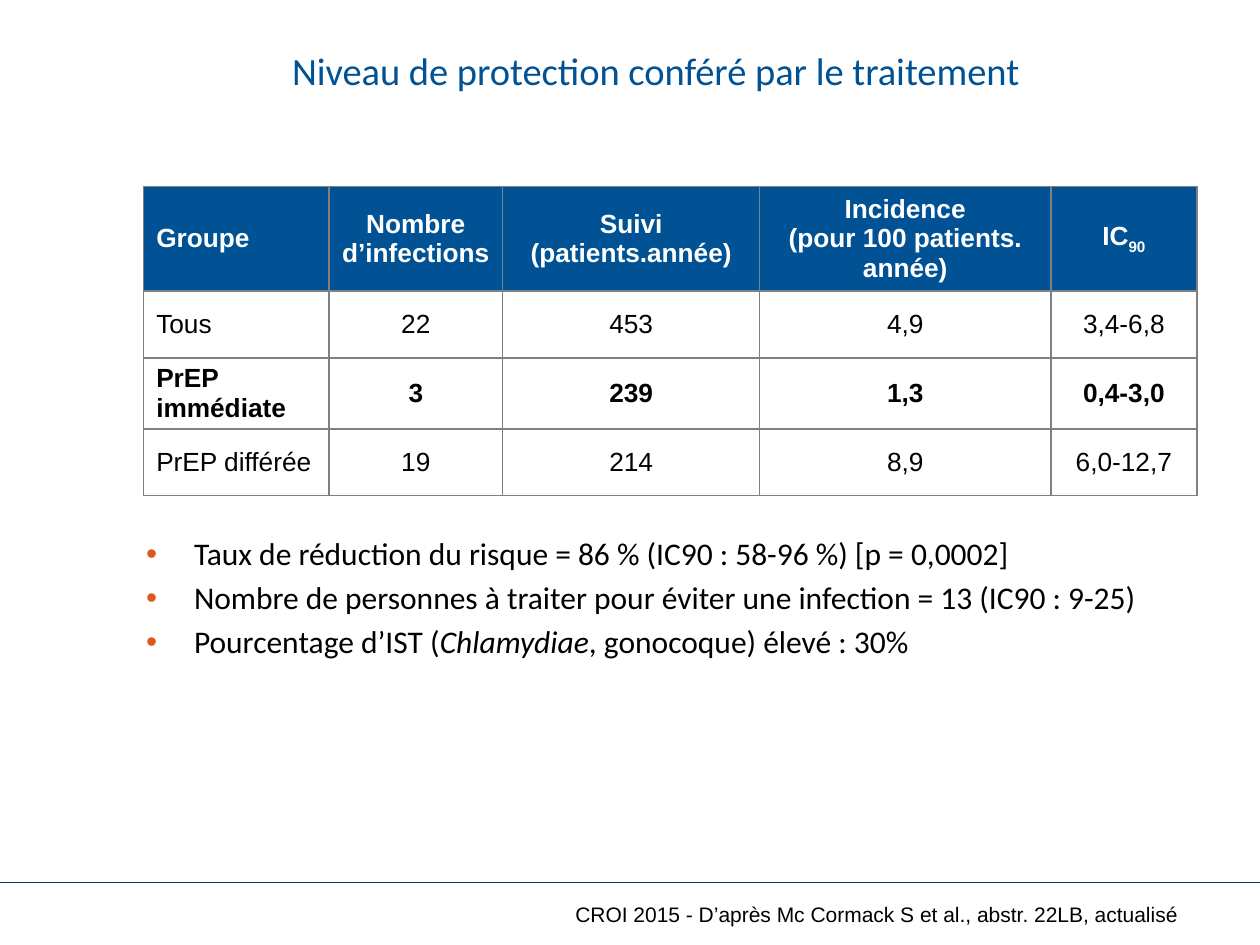
from lxml import etree
from pptx import Presentation
from pptx.dml.color import RGBColor
from pptx.enum.shapes import MSO_CONNECTOR
from pptx.enum.text import MSO_ANCHOR, MSO_AUTO_SIZE, PP_ALIGN
from pptx.oxml.ns import qn
from pptx.util import Inches, Pt

LEFT, CENTER, RIGHT = PP_ALIGN.LEFT, PP_ALIGN.CENTER, PP_ALIGN.RIGHT
MIDDLE, TOP = MSO_ANCHOR.MIDDLE, MSO_ANCHOR.TOP
STRAIGHT = MSO_CONNECTOR.STRAIGHT
NO_AUTOFIT = MSO_AUTO_SIZE.NONE

BLUE = RGBColor(0x00, 0x52, 0x94)
NAVY = RGBColor(0x17, 0x37, 0x5E)
ORANGE = RGBColor(0xDC, 0x5A, 0x20)
GREY = RGBColor(0x80, 0x80, 0x80)
WHITE = RGBColor(0xFF, 0xFF, 0xFF)
BLACK = RGBColor(0x00, 0x00, 0x00)

# Content
TITLE = "Niveau de protection conféré par le traitement"
ROWS = [
    ("Groupe", "Nombre d’infections", "Suivi\v(patients.année)",
     "Incidence\v(pour 100 patients. année)", "IC"),
    ("Tous", "22", "453", "4,9", "3,4-6,8"),
    ("PrEP immédiate", "3", "239", "1,3", "0,4-3,0"),
    ("PrEP différée", "19", "214", "8,9", "6,0-12,7"),
]
IC_SUBSCRIPT = "90"
BOLD_ROWS = (0, 2)
COL_WIDTHS = (1.47, 1.38, 2.04, 2.31, 1.16)
ROW_HEIGHTS = (0.83, 0.53, 0.53, 0.53)
BULLETS = [  # each a list of (text, italic)
    [("Taux de réduction du risque = 86 % (IC90 : 58-96 %) [p = 0,0002]", False)],
    [("Nombre de personnes à traiter pour éviter une infection\u00a0= 13 (IC90 : 9-25)", False)],
    [("Pourcentage d’IST (", False), ("Chlamydiae", True),
     (", gonocoque) élevé : 30%", False)],
]
SOURCE = "CROI 2015 - D’après Mc Cormack S et al., abstr. 22LB, actualisé "


def format_runs(p, font, size, color, bold=False):
    for r in p.runs:
        r.font.name, r.font.size, r.font.bold = font, Pt(size), bold
        r.font.color.rgb = color


def place(sp, left, top, width, height):
    sp.left, sp.top = Inches(left), Inches(top)
    sp.width, sp.height = Inches(width), Inches(height)


def set_frame(tf, anchor, margin=None):
    tf.word_wrap = True
    tf.auto_size = NO_AUTOFIT
    tf.vertical_anchor = anchor
    if margin is not None:
        tf.margin_left = tf.margin_right = tf.margin_top = tf.margin_bottom = margin


def add_color(parent, color):
    etree.SubElement(parent, qn("a:srgbClr"), val=str(color))


def set_bullet(p):
    pPr = p._p.get_or_add_pPr()
    pPr.set("marL", str(Inches(0.38)))
    pPr.set("indent", str(-Inches(0.38)))
    before = etree.SubElement(pPr, qn("a:spcBef"))
    etree.SubElement(before, qn("a:spcPct"), val="20000")
    add_color(etree.SubElement(pPr, qn("a:buClr")), ORANGE)
    etree.SubElement(pPr, qn("a:buFont"), typeface="Arial")
    etree.SubElement(pPr, qn("a:buChar"), char="•")


def set_borders(cell, color, width):
    tcPr = cell._tc.get_or_add_tcPr()
    for i, side in enumerate(("a:lnL", "a:lnR", "a:lnT", "a:lnB")):
        ln = etree.Element(qn(side), w=str(Pt(width)))
        add_color(etree.SubElement(ln, qn("a:solidFill")), color)
        tcPr.insert(i, ln)


prs = Presentation()
prs.slide_width, prs.slide_height = Inches(10), Inches(7.5)
s = prs.slides.add_slide(prs.slide_layouts[1])
title, body = s.placeholders

# Footer rule
rule = s.shapes.add_connector(STRAIGHT, 0, Inches(7), Inches(10), Inches(7))
rule.line.color.rgb = NAVY
rule.line.width = Pt(0.25)
etree.SubElement(rule._element.spPr, qn("a:effectLst"))

# Title
place(title, 1.16, 0.26, 8.09, 0.66)
title.text_frame.text = TITLE
set_frame(title.text_frame, MIDDLE, 0)
p = title.text_frame.paragraphs[0]
p.alignment, p.line_spacing = CENTER, Pt(22)
format_runs(p, "Calibri", 22, BLUE)

# Bullet list
place(body, 1.16, 4.24, 8.34, 2.05)
tf = body.text_frame
set_frame(tf, TOP, 0)
for i, parts in enumerate(BULLETS):
    p = tf.add_paragraph() if i else tf.paragraphs[0]
    set_bullet(p)
    for text, italic in parts:
        r = p.add_run()
        r.text, r.font.italic = text, italic
    format_runs(p, "Calibri", 18, BLACK)

# Results table
frame = s.shapes.add_table(len(ROWS), len(COL_WIDTHS), Inches(1.14), Inches(1.48),
                           Inches(sum(COL_WIDTHS)), Inches(sum(ROW_HEIGHTS)))
table = frame.table
for col, width in zip(table.columns, COL_WIDTHS):
    col.width = Inches(width)
for row, height in zip(table.rows, ROW_HEIGHTS):
    row.height = Inches(height)
for i, values in enumerate(ROWS):
    for j, value in enumerate(values):
        cell = table.cell(i, j)
        cell.text_frame.text = value
        cell.vertical_anchor = MIDDLE
        cell.fill.solid()
        cell.fill.fore_color.rgb = WHITE if i else BLUE
        set_borders(cell, GREY, 1)
        p = cell.text_frame.paragraphs[0]
        p.alignment = CENTER if j else LEFT
        if (i, j) == (0, len(values) - 1):
            r = p.add_run()
            r.text = IC_SUBSCRIPT
            r.font._element.set("baseline", "-25000")
        format_runs(p, "Arial", 15, BLACK if i else WHITE, i in BOLD_ROWS)

# Source
tb = s.shapes.add_textbox(Inches(3.03), Inches(7), Inches(6.47), Inches(0.51))
tb.text_frame.text = SOURCE
set_frame(tb.text_frame, MIDDLE)
p = tb.text_frame.paragraphs[0]
p.alignment = RIGHT
format_runs(p, "Arial", 12, BLACK)

prs.save("out.pptx")
